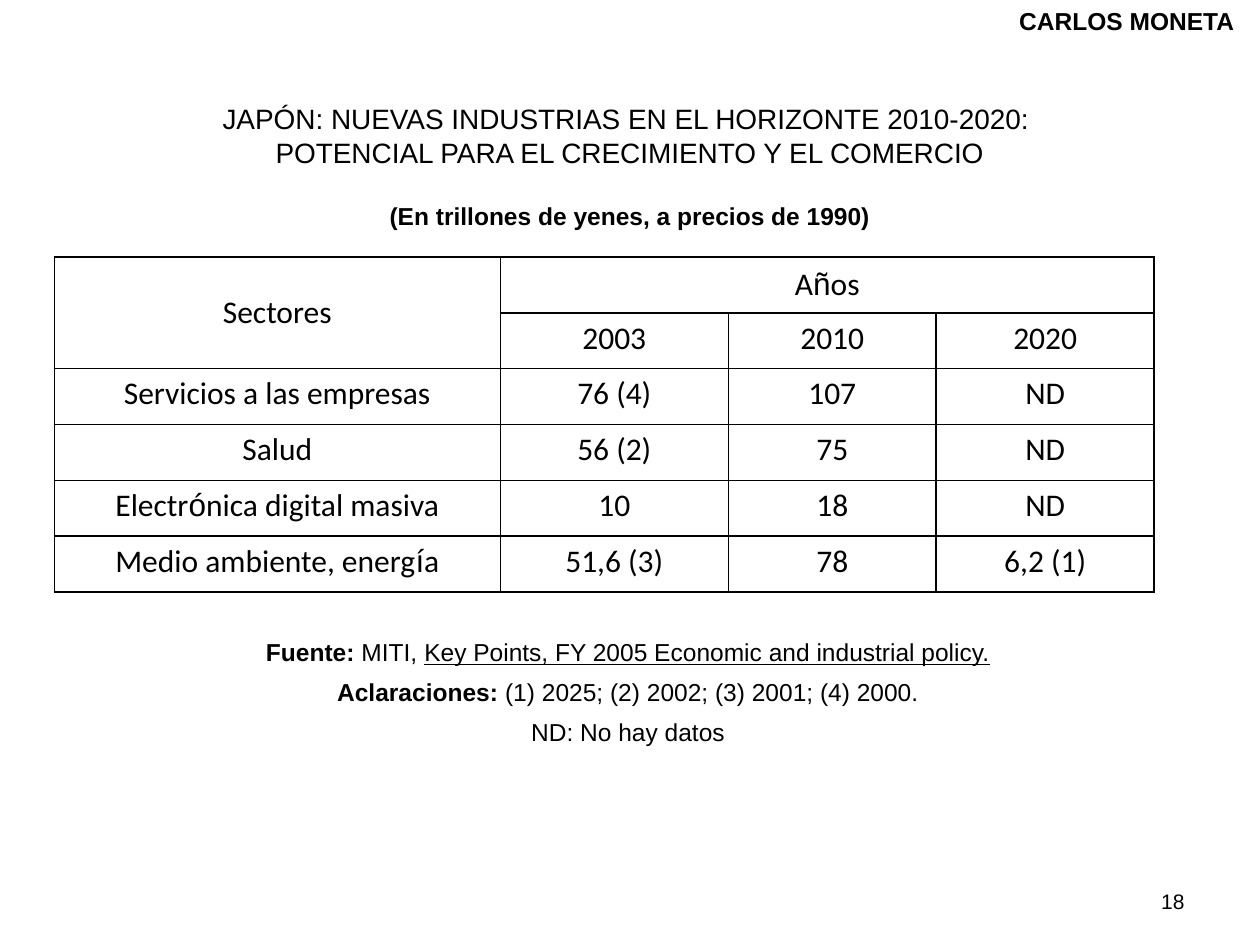
from dataclasses import dataclass
from itertools import groupby

from lxml.etree import SubElement
from pptx import Presentation
from pptx.dml.color import RGBColor
from pptx.enum.text import MSO_ANCHOR, PP_ALIGN
from pptx.oxml import parse_xml
from pptx.oxml.ns import nsdecls, qn
from pptx.util import Pt


@dataclass(frozen=True)
class Theme:
    ink: str = "000000"
    font: str = "Arial"
    grid_font: str = "Calibri"
    title: int = 16
    body: int = 14
    cell: int = 18
    page: int = 12
    line: float = 1


THEME = Theme()
COLS = (254.9, 130.3, 118.8, 124.6)
ROWS = (
    ("Sectores", "Años", "", ""),
    ("", "2003", "2010", "2020"),
    ("Servicios a las empresas", "76 (4)", "107", "ND"),
    ("Salud", "56 (2)", "75", "ND"),
    ("Electrónica digital masiva", "10", "18", "ND"),
    ("Medio ambiente, energía", "51,6 (3)", "78", "6,2 (1)"),
)


def write(frame, *paras, size=THEME.body, bold=False, align=PP_ALIGN.CENTER,
          before=0, anchor=MSO_ANCHOR.TOP):
    """Fill a frame; each paragraph is a string or a list of (text, format) runs."""
    frame.word_wrap = True
    frame.vertical_anchor = anchor
    for num, runs in enumerate(paras):
        para = frame.add_paragraph() if num else frame.paragraphs[0]
        para.alignment = align
        para.space_before = Pt(before)
        for text, form in [(runs, {})] if isinstance(runs, str) else runs:
            run = para.add_run()
            run.text = text
            font = run.font
            font.name = form.get("font", THEME.font)
            font.size = Pt(size)
            font.bold = form.get("bold", bold)
            font.underline = form.get("under", False)
            font.color.rgb = RGBColor.from_string(THEME.ink)


def add_text(slide, box, *paras, **form):
    shape = slide.shapes.add_textbox(*map(Pt, box))
    write(shape.text_frame, *paras, **form)


def split(text):
    """Split cell text into runs, with accented letters in the main font."""
    return [("".join(part), {"font": THEME.font if accent else THEME.grid_font})
            for accent, part in groupby(text, key=lambda char: char in "ñóí")]


def edge(cell):
    """Draw a line on all four sides of a cell."""
    props = cell._tc.get_or_add_tcPr()
    for pos, side in enumerate("LRTB"):
        line = parse_xml(f'<a:ln{side} {nsdecls("a")} w="{Pt(THEME.line)}"/>')
        fill = SubElement(line, qn("a:solidFill"))
        SubElement(fill, qn("a:srgbClr"), val=THEME.ink)
        props.insert(pos, line)


def add_grid(slide, left, top, height):
    shape = slide.shapes.add_table(len(ROWS), len(COLS), Pt(left), Pt(top),
                                   Pt(sum(COLS)), Pt(height))
    table = shape.table
    table.first_row = table.horz_banding = False
    for col, width in zip(table.columns, COLS):
        col.width = Pt(width)
    for row, texts in zip(table.rows, ROWS):
        row.height = Pt(height / len(ROWS))
        for cell, text in zip(row.cells, texts):
            cell.fill.background()
            edge(cell)
            if text:
                head = text in ("Sectores", "Años")
                write(cell.text_frame, split(text), size=THEME.cell)
                cell.vertical_anchor = MSO_ANCHOR.MIDDLE if head else MSO_ANCHOR.TOP
    table.cell(0, 0).merge(table.cell(1, 0))
    table.cell(0, 1).merge(table.cell(0, 3))


def add_head(slide, left, top, width):
    add_text(slide, (left, top, width, 46),
             "JAPÓN: NUEVAS INDUSTRIAS EN EL HORIZONTE 2010-2020: ",
             "POTENCIAL PARA EL CRECIMIENTO Y EL COMERCIO", size=THEME.title)
    add_text(slide, (left, top + 56.9, width, 24.5),
             "(En trillones de yenes, a precios de 1990)", bold=True, before=6)


def add_notes(slide, box):
    strong = {"bold": True}
    add_text(slide, box,
             [("Fuente: ", strong), ("MITI, ", {}),
              ("Key Points, FY 2005 Economic and industrial policy.", {"under": True})],
             [("Aclaraciones: ", strong),
              ("(1) 2025; (2) 2002; (3) 2001; (4) 2000.", {})],
             "ND: No hay datos", before=6)


def main():
    deck = Presentation()
    deck.slide_width, deck.slide_height = Pt(720), Pt(540)
    slide = deck.slides.add_slide(deck.slide_layouts[6])
    add_text(slide, (516.2, 500.4, 167.8, 28.8), "18", size=THEME.page,
             align=PP_ALIGN.RIGHT, anchor=MSO_ANCHOR.MIDDLE)
    add_head(slide, 0, 54.7, 720)
    add_grid(slide, 31, 146.9, 191.5)
    add_notes(slide, (14.4, 360.7, 689, 70.6))
    add_text(slide, (575.3, 0, 144.7, 23.8), "CARLOS MONETA", bold=True,
             align=PP_ALIGN.LEFT, before=7)
    deck.save("out.pptx")


if __name__ == "__main__":
    main()
